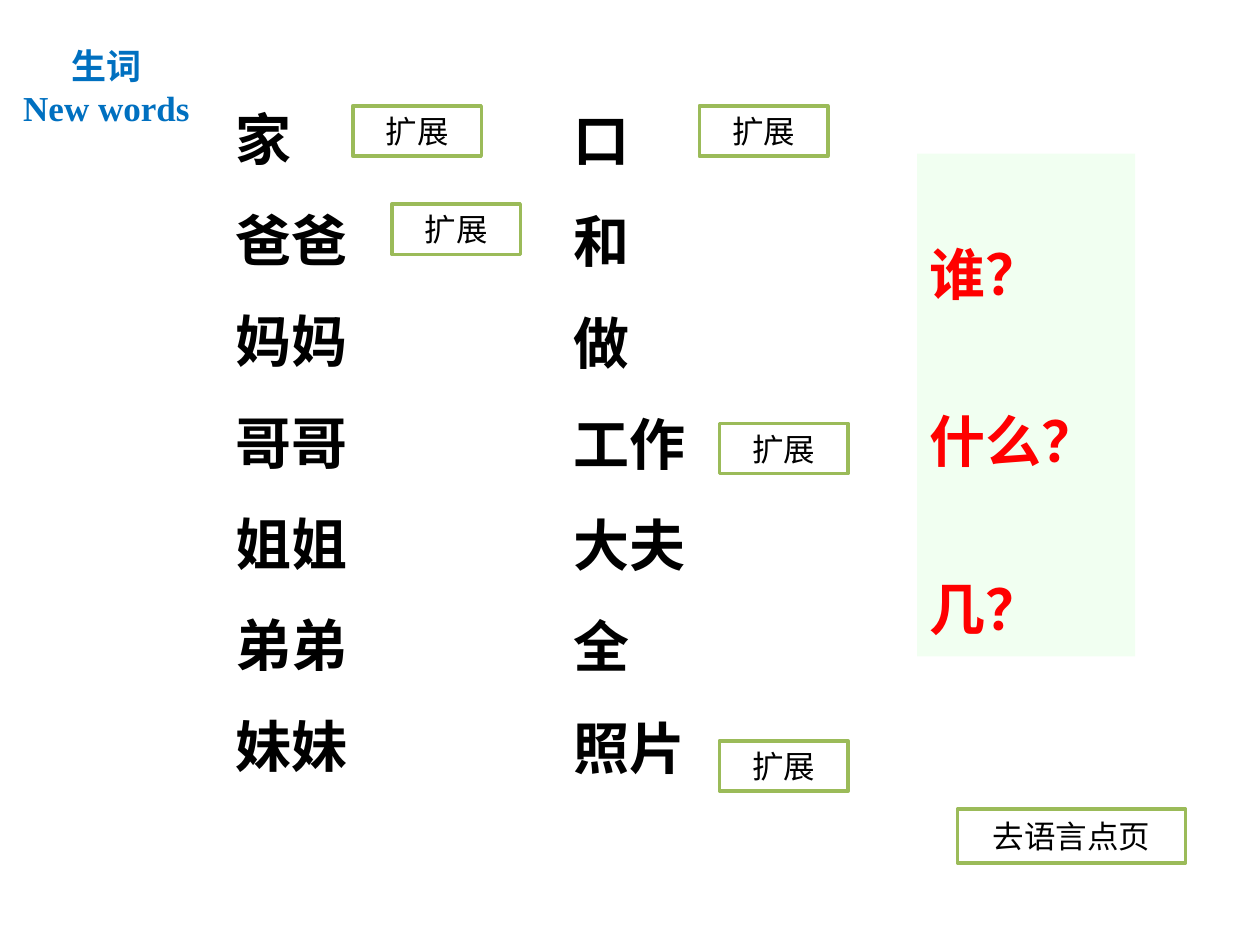
from lxml import etree
from pptx import Presentation
from pptx.dml.color import RGBColor
from pptx.enum.shapes import MSO_SHAPE
from pptx.enum.text import MSO_ANCHOR, MSO_AUTO_SIZE, PP_ALIGN
from pptx.oxml.ns import qn
from pptx.util import Inches, Pt

RECTANGLE = MSO_SHAPE.RECTANGLE
TOP, MIDDLE = MSO_ANCHOR.TOP, MSO_ANCHOR.MIDDLE
LEFT, CENTER = PP_ALIGN.LEFT, PP_ALIGN.CENTER
NO_AUTOFIT = MSO_AUTO_SIZE.NONE

BLACK = RGBColor(0x00, 0x00, 0x00)
WHITE = RGBColor(0xFF, 0xFF, 0xFF)
RED = RGBColor(0xFF, 0x00, 0x00)
BLUE = RGBColor(0x00, 0x70, 0xC0)
GREEN = RGBColor(0x9B, 0xBB, 0x59)
MINT = RGBColor(0xCC, 0xFF, 0xCC)

CHINESE, LATIN = "Noto Sans CJK SC", "Times New Roman"
WORD_SIZE = 32
LINE = 1.19 * WORD_SIZE
WORD_GAP = WORD_SIZE / 2

BUTTON_W, BUTTON_H = 1.02, 0.4
# Each column: left, top, words, then button offsets from its corner
WORD_COLUMNS = [
    (1.77, 0.68, ["家", "爸爸", "妈妈", "哥哥", "姐姐", "弟弟", "妹妹"],
     [(1.03, 0.16), (1.34, 0.94)]),
    (4.45, 0.69, ["口", "和", "做", "工作", "大夫", "全", "照片"],
     [(1.1, 0.15), (1.26, 2.67), (1.26, 5.19)]),
]
QUESTIONS = ["谁？", "什么？", "几？"]


def inches(box):
    return [Inches(length) for length in box]


def write_lines(frame, lines, size, color, bold=True, align=LEFT, anchor=TOP,
                inset=0.05, spacing=None, before=0):
    """Fill a text frame; spacing and before are in points."""
    frame.word_wrap = True
    frame.auto_size = NO_AUTOFIT
    frame.vertical_anchor = anchor
    frame.margin_left = frame.margin_right = Inches(0.1)
    frame.margin_top, frame.margin_bottom = Inches(inset), 0
    if anchor == MIDDLE:
        frame.margin_top = 0
    for index, line in enumerate(lines):
        paragraph = frame.paragraphs[0] if index == 0 else frame.add_paragraph()
        paragraph.alignment = align
        paragraph.space_before = Pt(before if index else 0)
        if spacing:
            paragraph.line_spacing = Pt(spacing)
        run = paragraph.add_run()
        run.text = line
        font = run.font
        font.size, font.bold = Pt(size), bold
        font.color.rgb = color
        font.name = LATIN if line.isascii() else CHINESE
        east_asian = etree.SubElement(run._r.get_or_add_rPr(), qn("a:ea"))
        east_asian.set("typeface", CHINESE)


def add_panel(slide, box, fill):
    panel = slide.shapes.add_shape(RECTANGLE, *inches(box))
    panel.shadow.inherit = False
    panel.fill.solid()
    panel.fill.fore_color.rgb = fill
    panel.line.fill.background()
    return panel


def add_title(slide, box):
    title = slide.shapes.title
    title.left, title.top, title.width, title.height = inches(box)
    write_lines(title.text_frame, ["生词", "New words"], 20, BLUE,
                align=CENTER, inset=0.07, spacing=24)


def add_button(slide, box, label):
    button = add_panel(slide, box, WHITE)
    button.line.color.rgb = GREEN
    button.line.width = Pt(2)
    write_lines(button.text_frame, [label], 18, BLACK, bold=False,
                align=CENTER, anchor=MIDDLE)


def add_word_column(slide, left, top, words, button_offsets):
    column = slide.shapes.add_textbox(*inches((left, top, 1.34, 5.81)))
    write_lines(column.text_frame, words, WORD_SIZE, BLACK, inset=0.1,
                spacing=1.1 * LINE, before=WORD_GAP)
    for dx, dy in button_offsets:
        add_button(slide, (left + dx, top + dy, BUTTON_W, BUTTON_H), "扩展")


def add_questions(slide, box):
    panel = add_panel(slide, box, MINT)
    color = panel.fill._xPr.find(qn("a:solidFill"))[0]
    etree.SubElement(color, qn("a:alpha")).set("val", "27000")
    write_lines(panel.text_frame, QUESTIONS, WORD_SIZE, RED, inset=0.1,
                spacing=2.1 * LINE, before=WORD_GAP)


def main():
    presentation = Presentation()
    presentation.slide_width, presentation.slide_height = Inches(10), Inches(7.5)
    slide = presentation.slides.add_slide(presentation.slide_layouts[5])
    add_title(slide, (0, 0.28, 1.69, 0.77))
    for column in WORD_COLUMNS:
        add_word_column(slide, *column)
    add_questions(slide, (7.28, 1.22, 1.73, 3.99))
    add_button(slide, (7.6, 6.42, 1.81, 0.43), "去语言点页")
    presentation.save("out.pptx")


if __name__ == "__main__":
    main()
